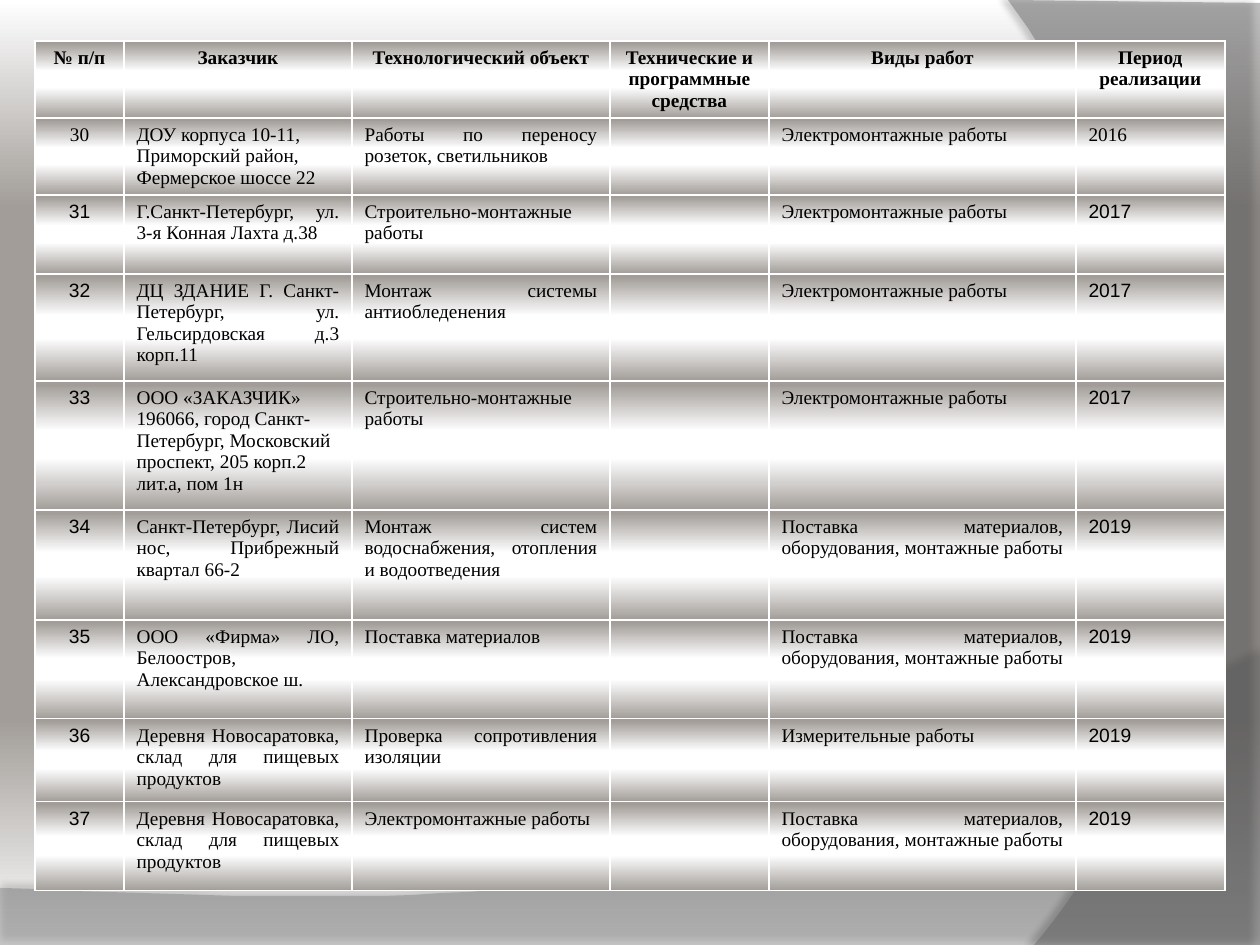
"""Build a slide with a table of completed projects, numbers 30 to 37."""
from lxml import etree
from pptx import Presentation
from pptx import util as u
from pptx.dml.color import RGBColor
from pptx.enum import text
from pptx.oxml import parse_xml
from pptx.oxml.ns import nsdecls, qn

HEADERS = ["№ п/п", "Заказчик", "Технологический объект",
           "Технические и программные средства", "Виды работ", "Период реализации"]
ELECTRICAL = "Электромонтажные работы"
BUILDING = "Строительно-монтажные работы"
SUPPLY = "Поставка материалов, оборудования, монтажные работы"
WAREHOUSE = "Деревня Новосаратовка, склад для пищевых продуктов"
PROJECTS = [
    ("30", "ДОУ корпуса 10-11, Приморский район, Фермерское шоссе 22",
     "Работы по переносу розеток, светильников", "", ELECTRICAL, "2016"),
    ("31", "Г.Санкт-Петербург, ул. 3-я Конная Лахта д.38", BUILDING, "", ELECTRICAL, "2017"),
    ("32", "ДЦ ЗДАНИЕ Г. Санкт-Петербург, ул. Гельсирдовская д.3 корп.11",
     "Монтаж системы антиобледенения", "", ELECTRICAL, "2017"),
    ("33", "ООО «ЗАКАЗЧИК» 196066, город Санкт-Петербург, Московский проспект, "
     "205 корп.2 лит.а, пом 1н", BUILDING, "", ELECTRICAL, "2017"),
    ("34", "Санкт-Петербург, Лисий нос, Прибрежный квартал 66-2",
     "Монтаж систем водоснабжения, отопления и водоотведения", "", SUPPLY, "2019"),
    ("35", "ООО «Фирма» ЛО, Белоостров, Александровское ш.",
     "Поставка материалов", "", SUPPLY, "2019"),
    ("36", WAREHOUSE, "Проверка сопротивления изоляции", "", "Измерительные работы", "2019"),
    ("37", WAREHOUSE, ELECTRICAL, "", SUPPLY, "2019"),
]
LEFT_ALIGNED = {("30", 1), ("30", 5), ("33", 1)}
SERIF_ROWS = {HEADERS[0], "30"}
FIGURE_COLUMNS = {0, 5}

SLIDE_SIZE = (1260, 945)
TABLE_ORIGIN = (35, 41)
COLUMN_WIDTHS = [89, 228, 258, 159, 307, 149]
ROW_HEIGHTS = [76, 67, 79, 107, 129, 110, 99, 83, 89]
WAVES = [
    dict(corners=[(0, 888), (0, 945), (1260, 945), (1260, 655)],
         curve=[(704, 919), (493, 906), (0, 888)],
         color="7F7F7F", opacity=45, shadow_opacity=35, distance=3.5, direction=270),
    dict(corners=[(1008, 0), (1260, 3), (1260, 945), (1034, 945)],
         curve=[(1178, 780), (1283, 378), (1008, 0)],
         color="5E5E5E", opacity=40, shadow_opacity=45, distance=4, direction=180),
]
THEME = dict(
    serif="Times New Roman", sans="Arial", size=11, ink="000000", line="FFFFFF", line_width=1,
    shadow="000000", shadow_blur=4,
    background=[(0, "FFFFFF"), (22, "A29D99"), (76, "A29D99"), (100, "FFFFFF")],
    cell=[(3, "A29D99"), (39, "FFFFFF"), (60, "FFFFFF"), (100, "A29D99")],
)
SCALE = 914400 / 126
CURVE_STEPS = 40


def px(length):
    return u.Emu(round(length * SCALE))


def fill_gradient(fill, element, stops):
    fill.solid()
    solid = element.find(".//" + qn("a:solidFill"))
    stop_xml = "".join(f'<a:gs pos="{position * 1000}"><a:srgbClr val="{color}"/></a:gs>'
                       for position, color in stops)
    gradient = parse_xml(f'<a:gradFill {nsdecls("a")} rotWithShape="1"><a:gsLst>{stop_xml}'
                         '</a:gsLst><a:lin ang="5400000" scaled="0"/></a:gradFill>')
    solid.getparent().replace(solid, gradient)


def bezier(points):
    for step in range(1, CURVE_STEPS + 1):
        t = step / CURVE_STEPS
        weights = ((1 - t) ** 3, 3 * t * (1 - t) ** 2, 3 * t * t * (1 - t), t ** 3)
        yield tuple(round(sum(w * p[axis] for w, p in zip(weights, points)), 2)
                    for axis in (0, 1))


def add_wave(slide, wave):
    corners = wave["corners"]
    builder = slide.shapes.build_freeform(*corners[0], scale=SCALE)
    outline = corners[1:] + list(bezier([corners[-1], *wave["curve"]]))
    builder.add_line_segments(outline, close=True)
    shape = builder.convert_to_shape()
    shape.line.fill.background()
    shape.fill.solid()
    shape.fill.fore_color.rgb = RGBColor.from_string(wave["color"])
    color = shape.element.spPr.find(".//" + qn("a:srgbClr"))
    etree.SubElement(color, qn("a:alpha"), val=str(wave["opacity"] * 1000))
    shape.shadow.inherit = False
    effects = shape.element.spPr.find(qn("a:effectLst"))
    effects.append(parse_xml(
        f'<a:outerShdw {nsdecls("a")} blurRad="{u.Pt(THEME["shadow_blur"])}" '
        f'dist="{u.Pt(wave["distance"])}" dir="{wave["direction"] * 60000}" '
        f'algn="ctr" rotWithShape="0"><a:srgbClr val="{THEME["shadow"]}">'
        f'<a:alpha val="{wave["shadow_opacity"] * 1000}"/></a:srgbClr></a:outerShdw>'))


def add_borders(cell_properties):
    for index, side in enumerate(("lnL", "lnR", "lnT", "lnB")):
        cell_properties.insert(index, parse_xml(
            f'<a:{side} {nsdecls("a")} w="{u.Pt(THEME["line_width"])}"><a:solidFill>'
            f'<a:srgbClr val="{THEME["line"]}"/></a:solidFill></a:{side}>'))


def write_cell(cell, words, column, number):
    is_header = number == HEADERS[0]
    paragraph = cell.text_frame.paragraphs[0]
    if is_header or column == 0:
        paragraph.alignment = text.PP_ALIGN.CENTER
    elif (number, column) in LEFT_ALIGNED:
        paragraph.alignment = text.PP_ALIGN.LEFT
    else:
        paragraph.alignment = text.PP_ALIGN.JUSTIFY
    run = paragraph.add_run()
    run.text = words
    is_sans = column in FIGURE_COLUMNS and number not in SERIF_ROWS
    run.font.name = THEME["sans" if is_sans else "serif"]
    run.font.size = u.Pt(THEME["size"])
    run.font.bold = is_header
    run.font.color.rgb = RGBColor.from_string(THEME["ink"])


def add_project_table(slide):
    rows = [HEADERS, *PROJECTS]
    frame = slide.shapes.add_table(
        len(rows), len(HEADERS), *map(px, TABLE_ORIGIN),
        px(sum(COLUMN_WIDTHS)), px(sum(ROW_HEIGHTS)))
    table = frame.table
    table.horz_banding = False
    for column, width in zip(table.columns, COLUMN_WIDTHS):
        column.width = px(width)
    for row, height, values in zip(table.rows, ROW_HEIGHTS, rows):
        row.height = px(height)
        for index, (cell, words) in enumerate(zip(row.cells, values)):
            properties = cell._tc.get_or_add_tcPr()
            fill_gradient(cell.fill, properties, THEME["cell"])
            add_borders(properties)
            if words:
                write_cell(cell, words, index, values[0])


def main():
    presentation = Presentation()
    presentation.slide_width, presentation.slide_height = map(px, SLIDE_SIZE)
    slide = presentation.slides.add_slide(presentation.slide_layouts[6])
    fill_gradient(slide.background.fill, slide.element, THEME["background"])
    for wave in WAVES:
        add_wave(slide, wave)
    add_project_table(slide)
    presentation.save("out.pptx")


if __name__ == "__main__":
    main()
